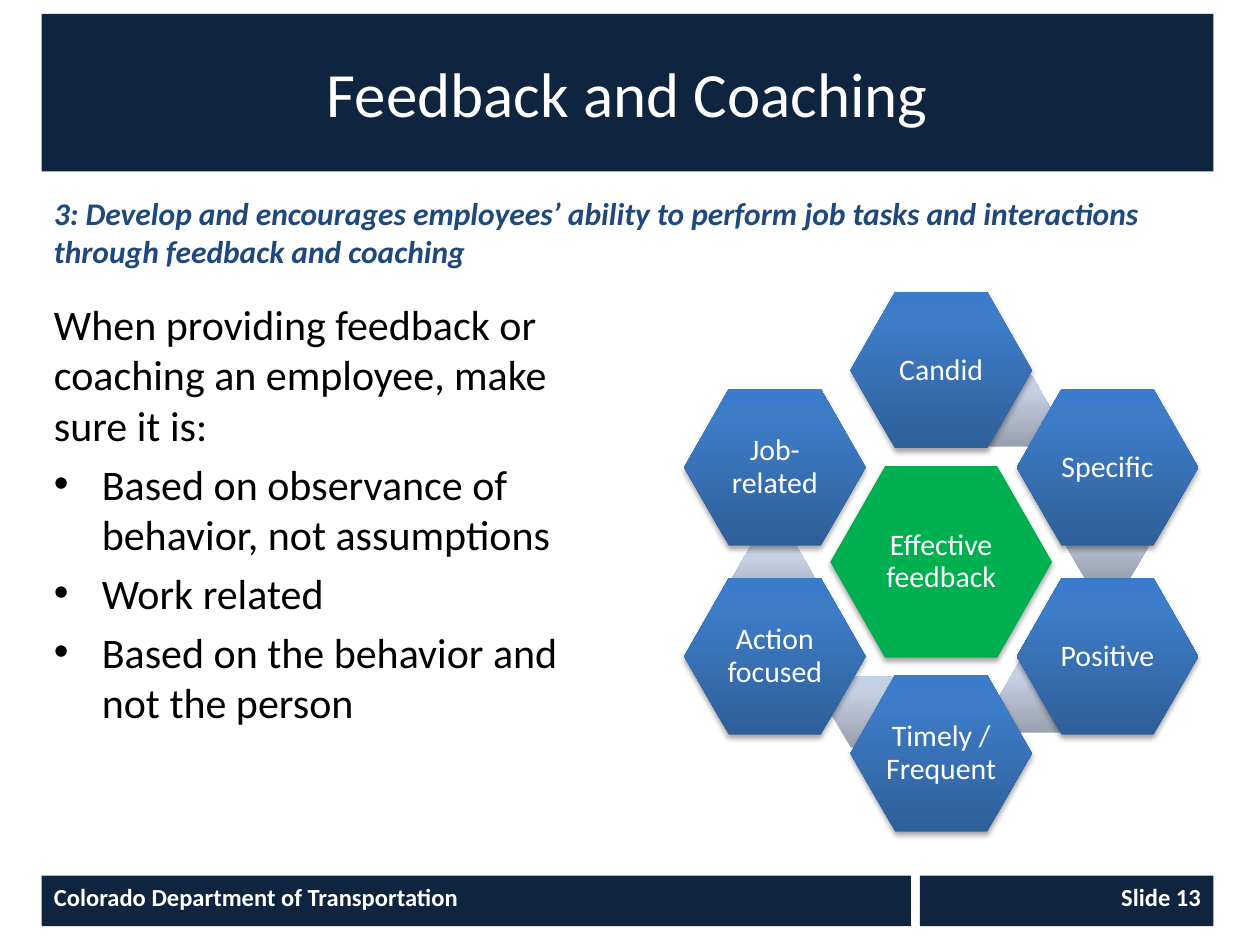
import copy
import dataclasses

import pptx
import pptx.dml.color
import pptx.enum.shapes
import pptx.enum.text
import pptx.oxml
import pptx.oxml.ns
import pptx.util

Inches = pptx.util.Inches
Pt = pptx.util.Pt
Rgb = pptx.dml.color.RGBColor.from_string
Kind = pptx.enum.shapes.MSO_SHAPE
Align = pptx.enum.text.PP_ALIGN
Anchor = pptx.enum.text.MSO_ANCHOR
qn = pptx.oxml.ns.qn


@dataclasses.dataclass(frozen=True)
class Theme:
    font: str = "Calibri"
    navy: str = "0F243E"
    blue: str = "1F497D"
    green: str = "00B050"
    white: str = "FFFFFF"
    black: str = "000000"
    node: tuple = ((0, "2F5F99"), (0.8, "3D7CC7"), (1, "3A7CCB"))
    link: tuple = ((0, "99A0AF"), (0.8, "C6D0E4"), (1, "C7D1E5"))
    title: int = 36
    body: int = 24
    lead: int = 18
    label: int = 17
    foot: int = 14


THEME = Theme()
HUB = (7.47, 4.46)

# Label, node offset from the hub, offset of the link that leaves the node
RING = [
    ("Candid", (0, -1.52), (0.55, -1.2)),
    ("Specific", (1.32, -0.75), (1.32, -0.13)),
    ("Positive", (1.32, 0.75), (0.79, 1.07)),
    ("Timely / Frequent", (0, 1.52), (-0.55, 1.19)),
    ("Action focused", (-1.32, 0.75), (-1.33, 0.13)),
    ("Job-related", (-1.32, -0.75), None),
]
LEAD = ("3: Develop and encourages employees’ ability to perform job tasks "
        "and interactions through feedback and coaching")
INTRO = "When providing feedback or coaching an employee, make sure it is:"
POINTS = [
    "Based on observance of behavior, not assumptions",
    "Work related",
    "Based on the behavior and not the person",
]


def style(para, size, color, align=Align.LEFT, bold=False, italic=False):
    para.alignment = align
    for run in para.runs:
        font = run.font
        font.name, font.size = THEME.font, Pt(size)
        font.bold, font.italic = bold, italic
        font.color.rgb = Rgb(color)


def add_form(slide, kind, box):
    form = slide.shapes.add_shape(kind, *map(Inches, box))
    form.shadow.inherit = False
    form.line.fill.background()
    return form


def paint(form, fill):
    """Fill with one colour, or with stops that run from bottom to top."""
    if isinstance(fill, str):
        form.fill.solid()
        form.fill.fore_color.rgb = Rgb(fill)
        return
    form.fill.gradient()
    form.fill.gradient_angle = 90
    stops = form._element.spPr.find(".//" + qn("a:gsLst"))
    stops.append(copy.deepcopy(stops[-1]))
    for stop, (place, color) in zip(form.fill.gradient_stops, fill):
        stop.position = place
        stop.color.rgb = Rgb(color)


def add_bar(slide, box, text, size, align, anchor, bold):
    bar = add_form(slide, Kind.RECTANGLE, box)
    paint(bar, THEME.navy)
    frame = bar.text_frame
    frame.text, frame.word_wrap = text, True
    frame.vertical_anchor = anchor
    style(frame.paragraphs[0], size, THEME.white, align, bold)


def add_text(slide, box):
    frame = slide.shapes.add_textbox(*map(Inches, box)).text_frame
    frame.word_wrap = True
    return frame


def add_hex(slide, shift, width, height, fill, bend=0.286):
    """Draw a hexagon centred at a shift from the hub."""
    left = HUB[0] + shift[0] - width / 2
    top = HUB[1] + shift[1] - height / 2
    form = add_form(slide, Kind.HEXAGON, (left, top, width, height))
    form.adjustments[0] = bend
    paint(form, fill)
    return form


def add_glow(form):
    """Give the form a soft shadow below it."""
    shade = pptx.oxml.parse_xml(
        f'<a:outerShdw {pptx.oxml.ns.nsdecls("a")} blurRad="{Pt(3.1)}" '
        f'dist="{Pt(1.8)}" dir="5400000" rotWithShape="0">'
        f'<a:srgbClr val="{THEME.black}"><a:alpha val="35000"/></a:srgbClr>'
        '</a:outerShdw>')
    form._element.spPr.find(qn("a:effectLst")).append(shade)


def add_node(slide, shift, width, height, fill, text):
    node = add_hex(slide, shift, width, height, fill)
    add_glow(node)
    frame = node.text_frame
    frame.text, frame.word_wrap = text, True
    frame.vertical_anchor = Anchor.MIDDLE
    frame.margin_left = frame.margin_right = Inches(0.02)
    frame.margin_top = frame.margin_bottom = Inches(0.02)
    para = frame.paragraphs[0]
    para.line_spacing = 0.9
    style(para, THEME.label, THEME.white, Align.CENTER)


def add_ring(slide):
    add_node(slide, (0, 0), 1.76, 1.52, THEME.green, "Effective feedback")
    for text, shift, link in RING:
        if link:
            add_hex(slide, link, 0.66, 0.57, THEME.link, 0.289)
        add_node(slide, shift, 1.44, 1.24, THEME.node, text)


def add_bullet(para):
    props = para._p.get_or_add_pPr()
    props.set("marL", str(Inches(0.38)))
    props.set("indent", str(-Inches(0.38)))
    for tag, name, value in (("buFont", "typeface", "Arial"),
                             ("buChar", "char", "•")):
        item = props.makeelement(qn("a:" + tag), {name: value})
        props.append(item)


def add_body(slide):
    frame = add_text(slide, (0.33, 2.32, 4.38, 4.28))
    frame.text = "\n".join([INTRO, *POINTS])
    for para in frame.paragraphs:
        para.space_before = Pt(THEME.body * 0.2)
        style(para, THEME.body, THEME.black)
    for para in frame.paragraphs[1:]:
        add_bullet(para)


def add_lead(slide):
    frame = add_text(slide, (0.33, 1.49, 9.3, 0.71))
    frame.text = LEAD
    style(frame.paragraphs[0], THEME.lead, THEME.blue, bold=True, italic=True)


def main():
    deck = pptx.Presentation()
    deck.slide_width, deck.slide_height = Inches(10), Inches(7.5)
    slide = deck.slides.add_slide(deck.slide_layouts[6])
    add_bar(slide, (0.33, 0.11, 9.3, 1.25), "Feedback and Coaching",
            THEME.title, Align.CENTER, Anchor.MIDDLE, False)
    add_ring(slide)
    add_bar(slide, (7.3, 6.95, 2.33, 0.4), "Slide 13",
            THEME.foot, Align.RIGHT, Anchor.TOP, True)
    add_body(slide)
    add_bar(slide, (0.33, 6.95, 6.9, 0.4),
            "Colorado Department of Transportation",
            THEME.foot, Align.LEFT, Anchor.TOP, True)
    add_lead(slide)
    deck.save("out.pptx")


if __name__ == "__main__":
    main()
